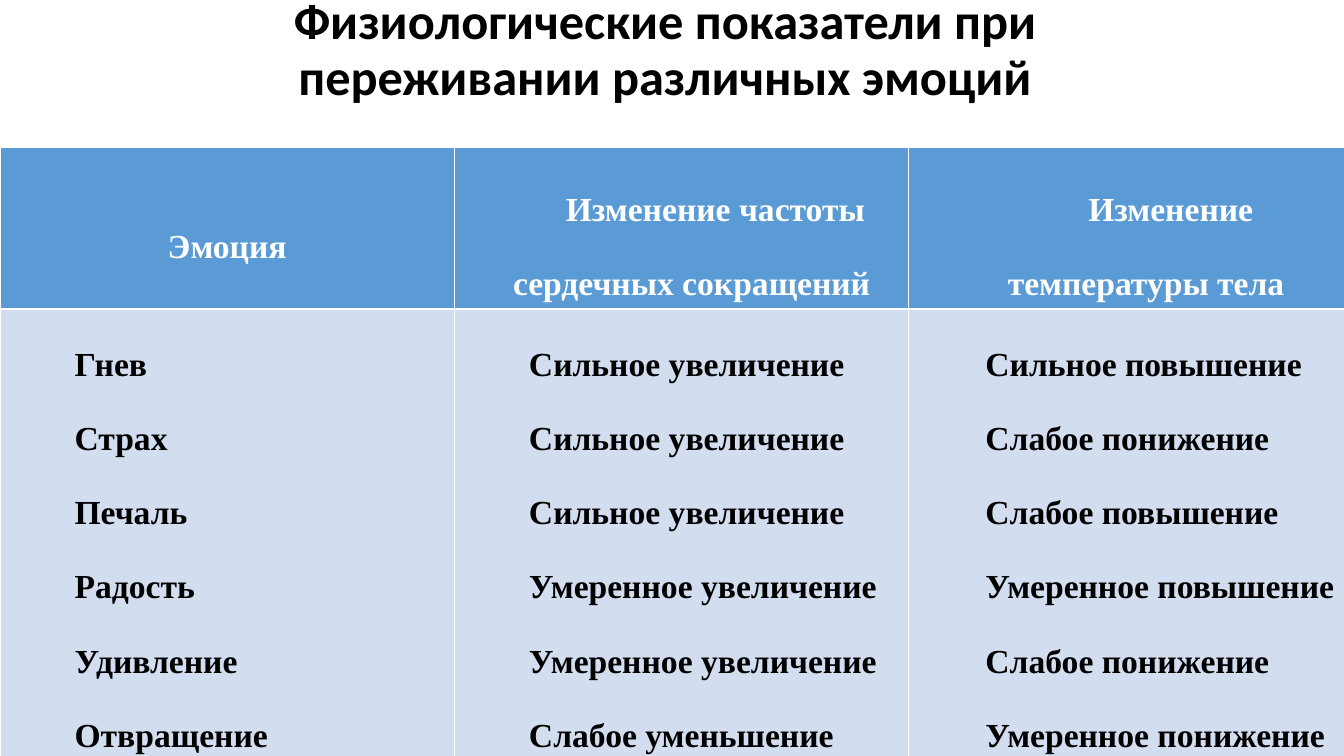
from pptx import Presentation
from pptx.dml.color import RGBColor
from pptx.enum.text import MSO_ANCHOR as Anchor, PP_ALIGN as Align
from pptx.oxml.ns import qn
from pptx.util import Inches, Pt
from lxml.etree import SubElement

HEADINGS = ["Эмоция", "Изменение частоты сердечных сокращений", "Изменение температуры тела"]
EMOTIONS = [
    ("Гнев", "Сильное увеличение", "Сильное повышение"),
    ("Страх", "Сильное увеличение", "Слабое понижение"),
    ("Печаль", "Сильное увеличение", "Слабое повышение"),
    ("Радость", "Умеренное увеличение", "Умеренное повышение"),
    ("Удивление", "Умеренное увеличение", "Слабое понижение"),
    ("Отвращение", "Слабое уменьшение", "Умеренное понижение"),
]
HEADING_INDENTS = [-0.2, 0.47, 0.49]
BODY_INDENTS = [0.47, 0.47, 0.49]


def colour(value):
    return RGBColor.from_string(value)


def write(para, text, font, size, ink, align, spacing, margin=0, indent=0):
    para.alignment = align
    para.line_spacing = spacing
    properties = para._p.get_or_add_pPr()
    properties.set("marL", str(Inches(margin)))
    properties.set("indent", str(Inches(indent)))
    span = para.add_run()
    span.text = text
    span.font.name = font
    span.font.size = Pt(size)
    span.font.bold = True
    span.font.color.rgb = colour(ink)


class Page:
    ink = "000000"
    paper = "FFFFFF"
    header_fill = "5B9BD5"
    body_fill = "D2DEEF"
    title_font = "Calibri"
    table_font = "Times New Roman"

    def __init__(self, deck):
        self.deck = deck
        self.slide = deck.slides.add_slide(deck.slide_layouts[6])

    def across(self, percent):
        return round(self.deck.slide_width * percent / 100)

    def down(self, percent):
        return round(self.deck.slide_height * percent / 100)

    def title(self, text, left, top, width, height):
        box = self.slide.shapes.add_textbox(
            self.across(left), self.down(top), self.across(width), self.down(height))
        frame = box.text_frame
        frame.word_wrap = True
        frame.vertical_anchor = Anchor.MIDDLE
        para = frame.paragraphs[0]
        write(para, text, self.title_font, 36, self.ink, Align.CENTER, 0.92)
        para.add_line_break()
        para._p.findall(qn("a:br"))[-1].get_or_add_rPr().set("sz", "3600")

    def border(self, cell):
        properties = cell._tc.get_or_add_tcPr()
        for position, side in enumerate(("lnL", "lnR", "lnT", "lnB")):
            line = SubElement(properties, qn(f"a:{side}"), w=str(Pt(1)))
            fill = SubElement(line, qn("a:solidFill"))
            SubElement(fill, qn("a:srgbClr"), val=self.paper)
            properties.insert(position, line)

    def cell(self, cell, lines, fill, ink, align, anchor, indent):
        cell.margin_left = cell.margin_right = Inches(0.07)
        cell.margin_top = cell.margin_bottom = 0
        cell.vertical_anchor = anchor
        cell.fill.solid()
        cell.fill.fore_color.rgb = colour(fill)
        self.border(cell)
        frame = cell.text_frame
        for number, text in enumerate(lines):
            para = frame.add_paragraph() if number else frame.paragraphs[0]
            write(para, text, self.table_font, 24, ink, align, 2.0, 0.2, indent)

    def table(self, headings, records, left, top, column, rows):
        count = len(headings)
        table = self.slide.shapes.add_table(
            len(rows), count, self.across(left), self.down(top),
            self.across(column * count), self.down(sum(rows))).table
        for row, height in zip(table.rows, rows):
            row.height = self.down(height)
        for index, values in enumerate(zip(*records)):
            table.columns[index].width = self.across(column)
            self.cell(table.cell(0, index), [headings[index]], self.header_fill, self.paper,
                      Align.CENTER, Anchor.MIDDLE, HEADING_INDENTS[index])
            self.cell(table.cell(1, index), values, self.body_fill, self.ink,
                      Align.JUSTIFY, Anchor.TOP, BODY_INDENTS[index])


def main():
    deck = Presentation()
    deck.slide_width, deck.slide_height = Inches(13.33), Inches(7.5)
    page = Page(deck)
    page.title("Физиологические показатели при переживании различных эмоций", 15.75, 7.1, 67.5, 7.2)
    page.table(HEADINGS, EMOTIONS, 0, 19.53, 33.81, [19.6, 64.27])
    deck.save("out.pptx")


if __name__ == "__main__":
    main()
